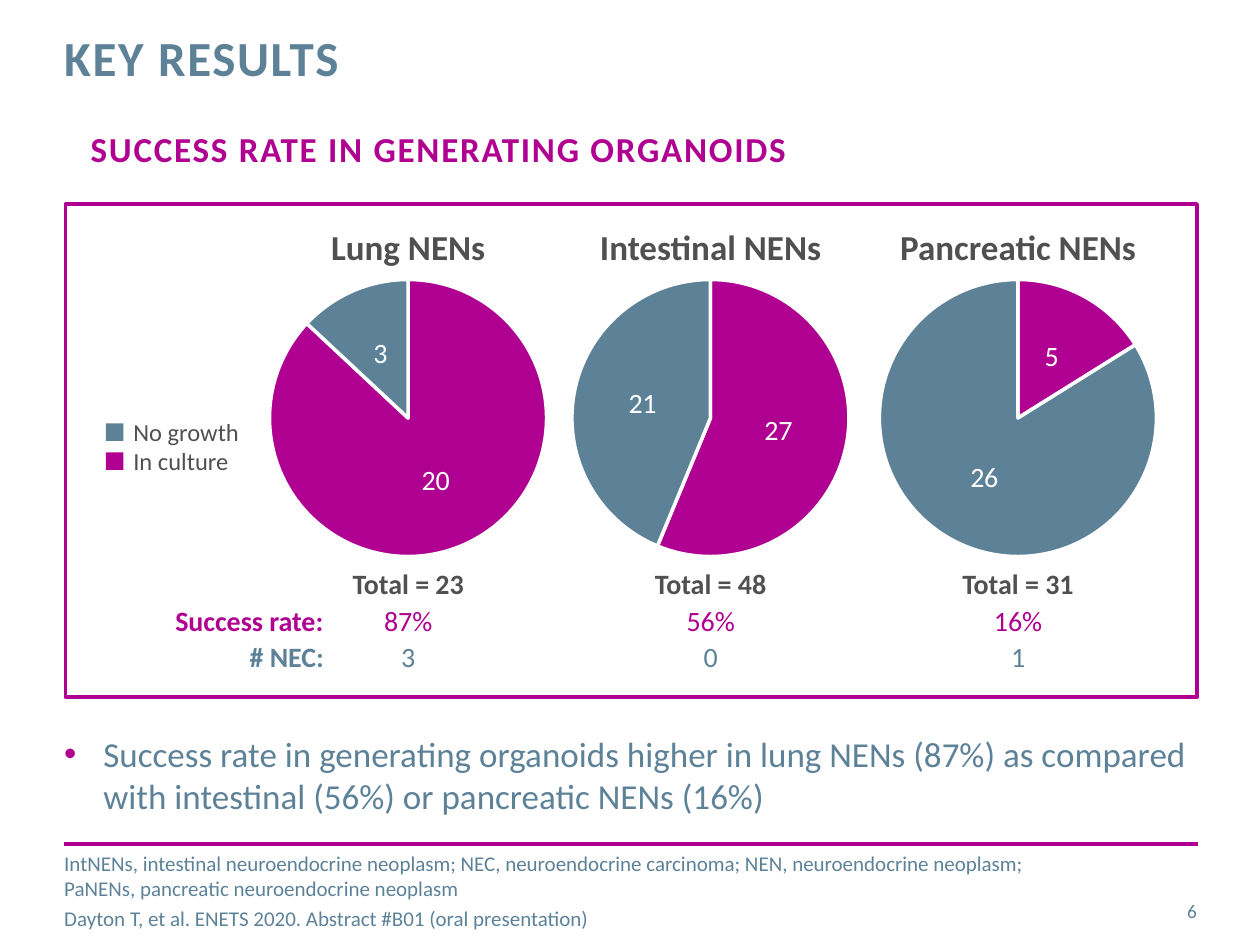
from dataclasses import dataclass

import pptx
import pptx.chart.data
import pptx.dml.color
import pptx.enum.chart
import pptx.enum.shapes
import pptx.enum.text
import pptx.oxml
import pptx.oxml.ns
import pptx.util
from pptx.util import Inches, Pt

MAGENTA = "B00091"
SLATE = "5D8298"
GREY = "505050"
WHITE = "FFFFFF"
FONT = "Calibri"
LEFT = pptx.enum.text.PP_ALIGN.LEFT
CENTER = pptx.enum.text.PP_ALIGN.CENTER
RIGHT = pptx.enum.text.PP_ALIGN.RIGHT
TOP = pptx.enum.text.MSO_ANCHOR.TOP
MIDDLE = pptx.enum.text.MSO_ANCHOR.MIDDLE
CHART_TOP, CHART_WIDTH, CHART_HEIGHT, PIE_DIAMETER = 1.62, 2.48, 3.4, 2.2


@dataclass
class Box:
    left: float
    top: float
    width: float
    height: float

    def lengths(self) -> tuple:
        return tuple(Inches(v) for v in (self.left, self.top, self.width, self.height))


@dataclass
class Style:
    size: float
    color: str
    bold: bool = False
    align: int = LEFT
    spacing: int = 0


@dataclass
class Tumour:
    name: str
    center: float
    name_width: float
    in_culture: int
    no_growth: int
    rate: str
    carcinomas: str


TUMOURS = [
    Tumour("Lung NENs", 3.24, 1.44, 20, 3, "87%", "3"),
    Tumour("Intestinal NENs", 5.64, 1.97, 27, 21, "56%", "0"),
    Tumour("Pancreatic NENs", 8.08, 2.09, 5, 26, "16%", "1"),
]


def rgb(color: str):
    return pptx.dml.color.RGBColor.from_string(color)


def add_text(slide, box: Box, lines: list[str], style: Style, wrap=True, anchor=TOP):
    frame = slide.shapes.add_textbox(*box.lengths()).text_frame
    frame.word_wrap = wrap
    frame.vertical_anchor = anchor
    if wrap:
        frame.margin_left = frame.margin_right = Inches(0)
        frame.margin_top = frame.margin_bottom = Inches(0)
    for index, line in enumerate(lines):
        paragraph = frame.paragraphs[0] if index == 0 else frame.add_paragraph()
        paragraph.text = line
        paragraph.alignment = style.align
        for run in paragraph.runs:
            run.font.name = FONT
            run.font.size = Pt(style.size)
            run.font.bold = style.bold
            run.font.color.rgb = rgb(style.color)
            if style.spacing:
                run.font._element.set("spc", str(style.spacing))
    return frame


def add_label(slide, center: float, top: float, width: float, text: str, style: Style):
    height = 0.44 if style.size == 20 else 0.37
    add_text(slide, Box(center - width / 2, top, width, height), [text], style, wrap=False)


def add_bullet(paragraph, color: str, indent: float):
    properties = paragraph._p.get_or_add_pPr()
    properties.set("marL", str(Inches(indent)))
    properties.set("indent", str(-Inches(indent)))
    namespace = pptx.oxml.ns.nsdecls("a")
    for xml in (
        f'<a:buClr {namespace}><a:srgbClr val="{color}"/></a:buClr>',
        f'<a:buFont {namespace} typeface="Arial"/>',
        f'<a:buChar {namespace} char="•"/>',
    ):
        properties.append(pptx.oxml.parse_xml(xml))


def add_rectangle(slide, box: Box, fill: str = "", line: str = ""):
    shape = slide.shapes.add_shape(
        pptx.enum.shapes.MSO_SHAPE.RECTANGLE, *box.lengths())
    shape.shadow.inherit = False
    if fill:
        shape.fill.solid()
        shape.fill.fore_color.rgb = rgb(fill)
    else:
        shape.fill.background()
    if line:
        shape.line.color.rgb = rgb(line)
        shape.line.width = Pt(2.25)
    else:
        shape.line.fill.background()


def add_rule(slide, left: float, right: float, top: float):
    connector = slide.shapes.add_connector(
        pptx.enum.shapes.MSO_CONNECTOR.STRAIGHT,
        Inches(left), Inches(top), Inches(right), Inches(top))
    connector.line.color.rgb = rgb(MAGENTA)
    connector.line.width = Pt(2)
    connector._element.spPr.append(
        pptx.oxml.parse_xml(f'<a:effectLst {pptx.oxml.ns.nsdecls("a")}/>'))


def add_pie(slide, tumour: Tumour):
    data = pptx.chart.data.CategoryChartData()
    data.categories = ["1", "2"]
    data.add_series("Series 1", (tumour.in_culture, tumour.no_growth))
    box = Box(tumour.center - CHART_WIDTH / 2, CHART_TOP, CHART_WIDTH, CHART_HEIGHT)
    chart = slide.shapes.add_chart(
        pptx.enum.chart.XL_CHART_TYPE.PIE, *box.lengths(), data).chart
    chart.has_legend = False
    chart.has_title = False
    chart.font.name = FONT
    chart.font.size = Pt(10)
    chart.font.color.rgb = rgb("000000")
    plot = chart.plots[0]
    plot.vary_by_categories = True
    for index, color in enumerate((MAGENTA, SLATE)):
        slice_format = plot.series[0].points[index].format
        slice_format.fill.solid()
        slice_format.fill.fore_color.rgb = rgb(color)
        slice_format.line.color.rgb = rgb(WHITE)
        slice_format.line.width = Pt(2)
    labels = plot.series[0].data_labels
    labels.show_value = True
    labels.show_percentage = False
    labels.position = pptx.enum.chart.XL_LABEL_POSITION.CENTER
    labels.font.name = FONT
    labels.font.size = Pt(16)
    labels.font.color.rgb = rgb(WHITE)
    width, height = PIE_DIAMETER / CHART_WIDTH, PIE_DIAMETER / CHART_HEIGHT
    plot_area = chart._chartSpace.chart.plotArea
    for layout in plot_area.findall(pptx.oxml.ns.qn("c:layout")):
        plot_area.remove(layout)
    plot_area.insert(0, pptx.oxml.parse_xml(
        f'<c:layout {pptx.oxml.ns.nsdecls("c")}><c:manualLayout>'
        '<c:layoutTarget val="inner"/><c:xMode val="edge"/><c:yMode val="edge"/>'
        f'<c:x val="{(1 - width) / 2:.3f}"/><c:y val="{(1 - height) / 2:.3f}"/>'
        f'<c:w val="{width:.3f}"/><c:h val="{height:.3f}"/>'
        '</c:manualLayout></c:layout>'))


def add_tumour(slide, tumour: Tumour):
    add_pie(slide, tumour)
    total = tumour.in_culture + tumour.no_growth
    for top, width, text, style in (
        (1.74, tumour.name_width, tumour.name, Style(20, GREY, True, CENTER)),
        (4.45, 1.1, f"Total = {total}", Style(16, GREY, True, CENTER)),
        (4.74, 0.59, tumour.rate, Style(16, MAGENTA, False, CENTER)),
        (5.03, 0.32, tumour.carcinomas, Style(16, SLATE, False, CENTER)),
    ):
        add_label(slide, tumour.center, top, width, text, style)


def main():
    presentation = pptx.Presentation()
    presentation.slide_width = Inches(10)
    presentation.slide_height = Inches(7.5)
    slide = presentation.slides.add_slide(presentation.slide_layouts[6])

    add_rule(slide, 0.51, 9.51, 6.7)
    title = add_text(slide, Box(0.51, 0.27, 7.17, 0.88), ["KEY RESULTS"],
                     Style(28, SLATE, True, spacing=100))
    title.paragraphs[0].line_spacing = Pt(30)
    add_text(slide, Box(0.72, 1.01, 9, 0.77), ["SUCCESS RATE IN GENERATING ORGANOIDS"],
             Style(20, MAGENTA, True, spacing=100))
    finding = add_text(slide, Box(0.51, 5.81, 8.99, 0.69), [
        "Success rate in generating organoids higher in lung NENs (87%) as compared "
        "with intestinal (56%) or pancreatic NENs (16%)"], Style(20, SLATE))
    add_bullet(finding.paragraphs[0], MAGENTA, 0.31)
    footnotes = add_text(slide, Box(0.51, 6.87, 8.82, 0.4), [
        "IntNENs, intestinal neuroendocrine neoplasm; NEC, neuroendocrine carcinoma; "
        "NEN, neuroendocrine neoplasm;\vPaNENs, pancreatic neuroendocrine neoplasm",
        "Dayton T, et al. ENETS 2020. Abstract #B01 (oral presentation)",
    ], Style(12, SLATE), anchor=MIDDLE)
    for paragraph in footnotes.paragraphs:
        paragraph.space_after = Pt(3)
    add_text(slide, Box(8.86, 7.03, 0.64, 0.4), ["6"],
             Style(11, SLATE, align=RIGHT), anchor=MIDDLE)

    for tumour in TUMOURS:
        add_tumour(slide, tumour)
    add_label(slide, 1.97, 4.74, 1.39, "Success rate:", Style(16, MAGENTA, True, RIGHT))
    add_label(slide, 2.27, 5.03, 0.8, "# NEC:", Style(16, SLATE, True, RIGHT))

    add_rectangle(slide, Box(0.52, 1.62, 8.98, 3.91), line=MAGENTA)
    add_text(slide, Box(0.96, 3.26, 1.05, 0.57), ["No growth", "In culture"],
             Style(14, GREY), wrap=False)
    for top, color in ((3.36, SLATE), (3.59, MAGENTA)):
        add_rectangle(slide, Box(0.84, top, 0.14, 0.14), fill=color)
    presentation.save("out.pptx")


if __name__ == "__main__":
    main()
